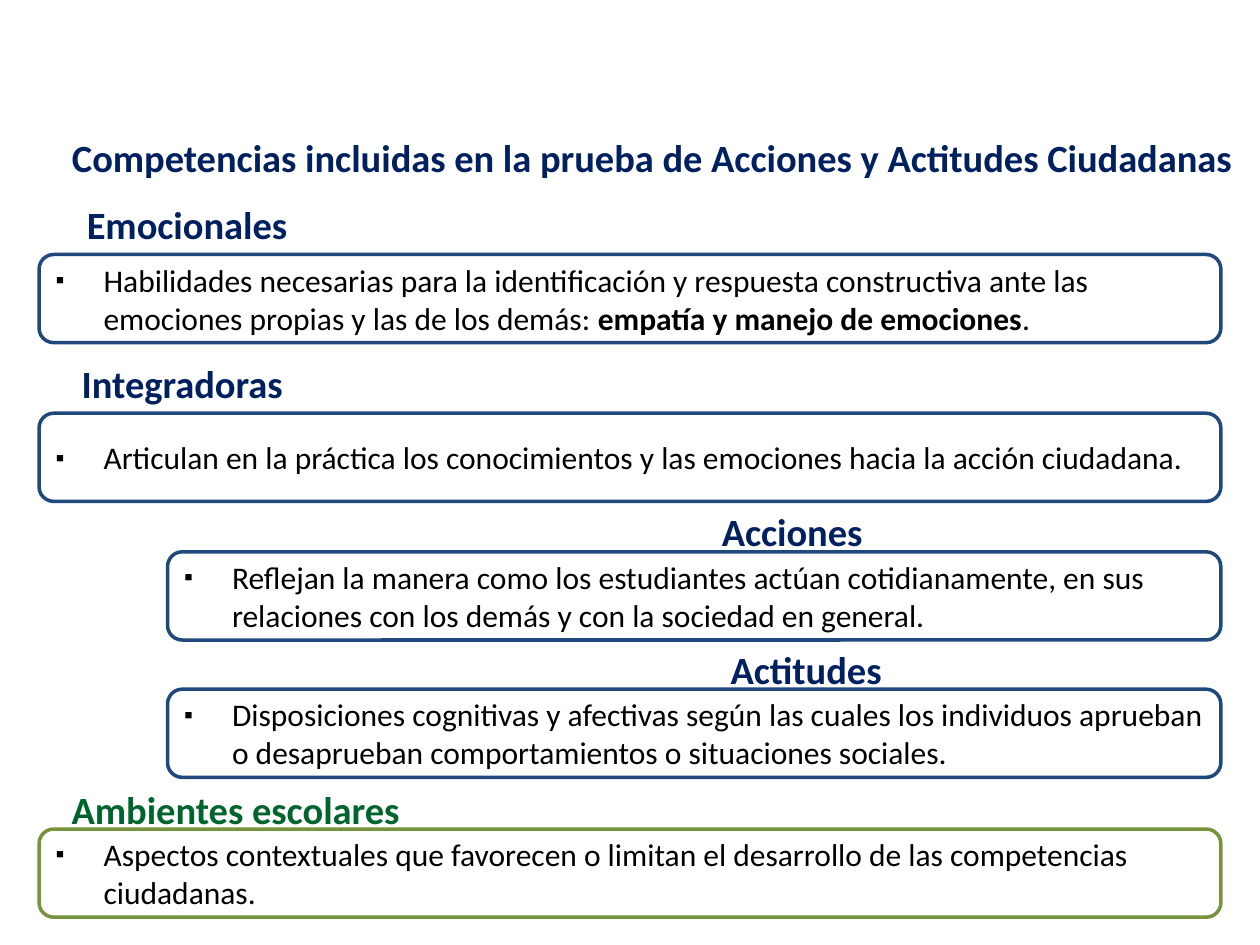
from lxml.etree import SubElement
from pptx import Presentation
from pptx.dml.color import RGBColor
from pptx.enum.shapes import MSO_SHAPE as Shape
from pptx.enum.text import MSO_ANCHOR as Anchor, MSO_AUTO_SIZE as AutoSize, PP_ALIGN as Align
from pptx.oxml.ns import qn
from pptx.util import Inches, Pt

NAVY = RGBColor(0x00, 0x20, 0x60)
BLUE = RGBColor(0x1F, 0x49, 0x7D)
DARK_GREEN = RGBColor(0x00, 0x64, 0x2D)
OLIVE = RGBColor(0x77, 0x93, 0x3C)
BLACK = RGBColor(0, 0, 0)

TITLE = "Competencias incluidas en la prueba de Acciones y Actitudes Ciudadanas"
RIGHT_EDGE, BOX_HEIGHT = 9.69, 0.7
LABEL_WIDTH, LABEL_HEIGHT = 3.75, 0.47
OUTER, INNER = 0.31, 1.33
HANG = Inches(0.38)

# heading, (heading left, top), heading colour, (box left, top), line colour, [(text, bold)]
SECTIONS = [
    ("Emocionales", (0.59, 1.55), NAVY, (OUTER, 2.02), BLUE,
     [("Habilidades necesarias para la identificación y respuesta constructiva ante las "
       "emociones propias y las de los demás: ", False),
      ("empatía y manejo de emociones", True), (".", False)]),
    ("Integradoras", (0.55, 2.81), NAVY, (OUTER, 3.28), BLUE,
     [("Articulan en la práctica los conocimientos y las emociones hacia la acción "
       "ciudadana.", False)]),
    ("Acciones", (5.63, 3.98), NAVY, (INNER, 4.38), BLUE,
     [("Reflejan la manera como los estudiantes actúan cotidianamente, en sus relaciones "
       "con los demás y con la sociedad en general.", False)]),
    ("Actitudes", (5.7, 5.08), NAVY, (INNER, 5.47), BLUE,
     [("Disposiciones cognitivas y afectivas según las cuales los individuos aprueban o "
       "desaprueban comportamientos o situaciones sociales.", False)]),
    ("Ambientes escolares", (0.47, 6.19), DARK_GREEN, (OUTER, 6.58), OLIVE,
     [("Aspectos contextuales que favorecen o limitan el desarrollo de las competencias "
       "ciudadanas.", False)]),
]


def style(font, size, color, bold):
    font.name = "Calibri"
    font.size = Pt(size)
    font.color.rgb = color
    font.bold = bold


def add_bullet(para):
    props = para._p.get_or_add_pPr()
    props.set("marL", str(HANG))
    props.set("indent", str(-HANG))
    color = SubElement(SubElement(props, qn("a:buClr")), qn("a:srgbClr"))
    color.set("val", str(BLACK))
    SubElement(props, qn("a:buSzPct")).set("val", "80000")
    SubElement(props, qn("a:buFont")).set("typeface", "Arial")
    SubElement(props, qn("a:buChar")).set("char", "▪")


def add_title(page):
    title = page.shapes.title
    title.left, title.top = Inches(0.39), Inches(1)
    title.width, title.height = Inches(9.57), Inches(0.49)
    frame = title.text_frame
    frame.text = TITLE
    frame.vertical_anchor = Anchor.MIDDLE
    frame.auto_size = AutoSize.NONE
    para = frame.paragraphs[0]
    para.alignment = Align.CENTER
    style(para.runs[0].font, 22, NAVY, True)


def add_heading(page, text, left, top, color):
    label = page.shapes.add_textbox(Inches(left), Inches(top),
                                    Inches(LABEL_WIDTH), Inches(LABEL_HEIGHT))
    frame = label.text_frame
    frame.word_wrap = True
    frame.auto_size = AutoSize.SHAPE_TO_FIT_TEXT
    frame.text = text
    style(frame.paragraphs[0].runs[0].font, 22, color, True)


def add_description(page, spans, left, top, line_color):
    box = page.shapes.add_shape(Shape.ROUNDED_RECTANGLE, Inches(left), Inches(top),
                                Inches(RIGHT_EDGE - left), Inches(BOX_HEIGHT))
    box.shadow.inherit = False
    box.fill.background()
    box.line.color.rgb = line_color
    box.line.width = Pt(2)
    frame = box.text_frame
    frame.word_wrap = True
    frame.vertical_anchor = Anchor.MIDDLE
    para = frame.paragraphs[0]
    para.alignment = Align.LEFT
    add_bullet(para)
    for text, bold in spans:
        span = para.add_run()
        span.text = text
        style(span.font, 18, BLACK, bold)


def main():
    deck = Presentation()
    deck.slide_width, deck.slide_height = Inches(10), Inches(7.5)
    page = deck.slides.add_slide(deck.slide_layouts[5])
    add_title(page)
    for heading, heading_at, heading_color, box_at, line_color, spans in SECTIONS:
        add_heading(page, heading, *heading_at, heading_color)
        add_description(page, spans, *box_at, line_color)
    deck.save("out.pptx")


if __name__ == "__main__":
    main()
